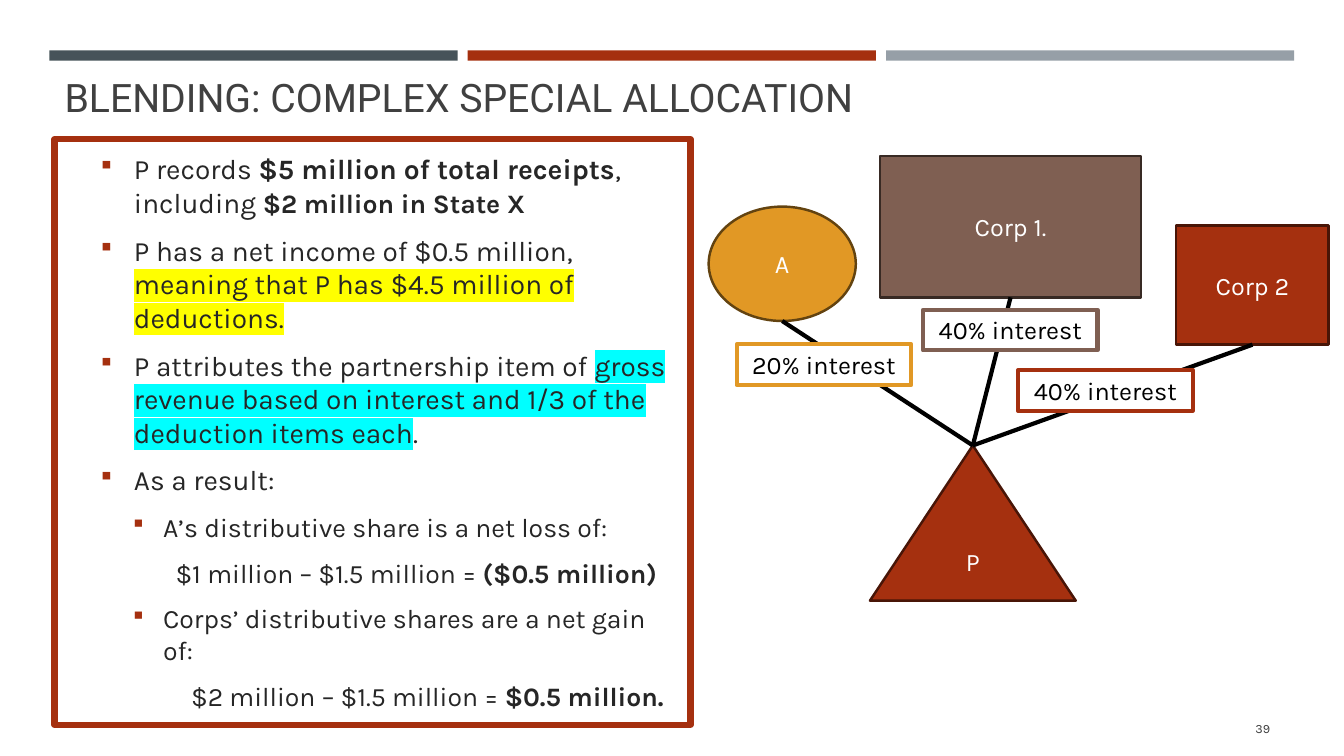
from typing import NamedTuple, Optional

from lxml.etree import SubElement
from pptx import Presentation
from pptx.dml.color import RGBColor
from pptx.enum.shapes import MSO_CONNECTOR, MSO_SHAPE
from pptx.enum.text import MSO_ANCHOR, MSO_AUTO_SIZE, PP_ALIGN
from pptx.oxml.ns import qn
from pptx.util import Pt

COLORS = {
    "slate": "465359", "red": "A5300F", "gray": "969FA7", "amber": "E19825", "brown": "7F5F52",
    "dark red": "481507", "dark amber": "634310", "dark brown": "382A24",
    "title": "404040", "body": "262626", "white": "FFFFFF", "black": "000000",
    "yellow": "FFFF00", "cyan": "00FFFF",
}


class Box(NamedTuple):
    left: float
    top: float
    width: float
    height: float


class Entity(NamedTuple):
    name: str
    kind: MSO_SHAPE
    box: Box
    fill: str
    line: str


class Label(NamedTuple):
    text: str
    left: float
    top: float
    line: str


class Piece(NamedTuple):
    text: str
    bold: bool = False
    highlight: Optional[str] = None
    size: Optional[float] = None


class Item(NamedTuple):
    pieces: list[Piece]
    size: float = 20
    margin: float = 49.7
    hanging: float = 23.8
    bullet: bool = True


BAR_COLORS = ["slate", "red", "gray"]
BAR = Box(35.3, 36, 291.6, 7.4)
BAR_STEP = 298.8

PARTNERSHIP = Entity("P", MSO_SHAPE.ISOSCELES_TRIANGLE, Box(621.4, 318.2, 147, 110.9), "red", "dark red")
PARTNERS = [
    Entity("A", MSO_SHAPE.OVAL, Box(506.2, 147.6, 105.1, 81.7), "amber", "dark amber"),
    Entity("Corp 1.", MSO_SHAPE.RECTANGLE, Box(628.6, 111.6, 186.5, 100.8), "brown", "dark brown"),
    Entity("Corp 2", MSO_SHAPE.RECTANGLE, Box(840.2, 161, 108.9, 85.2), "red", "dark red"),
]
LABEL_WIDTH, LABEL_HEIGHT = 124.7, 29
LABELS = [
    Label("20% interest", 526.2, 246, "amber"),
    Label("40% interest", 659.3, 221.3, "brown"),
    Label("40% interest", 727.2, 264.4, "red"),
]
SUB_ITEM = {"size": 19, "margin": 70.6, "hanging": 21.6}
ITEMS = [
    Item([Piece("P records "), Piece("$5 million of total receipts", bold=True),
          Piece(", including "), Piece("$2 million in State X", bold=True, size=19)]),
    Item([Piece("P has a net income of $0.5 million, "),
          Piece("meaning that P has $4.5 million of deductions.", highlight="yellow")]),
    Item([Piece("P attributes the partnership item of "),
          Piece("gross revenue based on interest and 1/3 of the deduction items each", highlight="cyan"),
          Piece(".")]),
    Item([Piece("As a result:")]),
    Item([Piece("A’s distributive share is a net loss of:")], **SUB_ITEM),
    Item([Piece("$1 million – $1.5 million = "), Piece("($0.5 million)", bold=True)],
         size=19, margin=79.4, hanging=0, bullet=False),
    Item([Piece("Corps’ distributive shares are a net gain of:")], **SUB_ITEM),
    Item([Piece("$2 million – $1.5 million = "), Piece("$0.5 million.", bold=True)],
         size=19, margin=90.5, hanging=0, bullet=False),
]


def rgb(color: str) -> RGBColor:
    return RGBColor.from_string(COLORS[color])


def add_text(paragraph, text: str, *, size: float, color: str, font: str = "Karla",
             bold: bool = False, highlight: Optional[str] = None) -> None:
    run = paragraph.add_run()
    run.text = text
    run.font.name = font
    run.font.size = Pt(size)
    run.font.bold = bold
    run.font.color.rgb = rgb(color)
    if highlight:
        properties = run.font._element
        mark = SubElement(properties, qn("a:highlight"))
        SubElement(mark, qn("a:srgbClr"), val=COLORS[highlight])
        properties.find(qn("a:solidFill")).addnext(mark)


def prepare_frame(shape, anchor: MSO_ANCHOR):
    frame = shape.text_frame
    frame.word_wrap = True
    frame.auto_size = MSO_AUTO_SIZE.NONE
    frame.vertical_anchor = anchor
    return frame


def add_block(slide, kind: MSO_SHAPE, box: Box, *, fill: Optional[str] = None,
              line: Optional[str] = None, line_width: float = 1.75):
    shape = slide.shapes.add_shape(kind, *map(Pt, box))
    shape.shadow.inherit = False
    if fill:
        shape.fill.solid()
        shape.fill.fore_color.rgb = rgb(fill)
    else:
        shape.fill.background()
    if line:
        shape.line.color.rgb = rgb(line)
        shape.line.width = Pt(line_width)
    else:
        shape.line.fill.background()
    return shape


def center_text(shape, text: str, color: str, anchor: MSO_ANCHOR) -> None:
    paragraph = prepare_frame(shape, anchor).paragraphs[0]
    paragraph.alignment = PP_ALIGN.CENTER
    add_text(paragraph, text, size=18, color=color)


def add_entity(slide, entity: Entity):
    shape = add_block(slide, entity.kind, entity.box, fill=entity.fill, line=entity.line)
    center_text(shape, entity.name, "white", MSO_ANCHOR.MIDDLE)
    return shape


def add_ownership_line(slide, partner, partnership) -> None:
    """Join the bottom of a partner to the apex of the partnership."""
    connector = slide.shapes.add_connector(
        MSO_CONNECTOR.STRAIGHT,
        partner.left + partner.width // 2, partner.top + partner.height,
        partnership.left + partnership.width // 2, partnership.top)
    if partner.auto_shape_type == MSO_SHAPE.RECTANGLE:
        connector.begin_connect(partner, 2)
    connector.end_connect(partnership, 0)
    connector.line.color.rgb = rgb("black")
    connector.line.width = Pt(3)
    SubElement(connector._element.spPr, qn("a:effectLst"))


def add_items(slide) -> None:
    panel = add_block(slide, MSO_SHAPE.RECTANGLE, Box(38.9, 99.4, 454.3, 418.3), line="red", line_width=4.5)
    frame = prepare_frame(panel, MSO_ANCHOR.MIDDLE)
    for index, item in enumerate(ITEMS):
        paragraph = frame.add_paragraph() if index else frame.paragraphs[0]
        paragraph.alignment = PP_ALIGN.LEFT
        paragraph.space_before = Pt(4 if index else 0)
        paragraph.space_after = Pt(6)
        properties = paragraph._p.get_or_add_pPr()
        properties.set("marL", str(Pt(item.margin)))
        properties.set("indent", str(-Pt(item.hanging)))
        if item.bullet:
            SubElement(SubElement(properties, qn("a:buClr")), qn("a:srgbClr"), val=COLORS["red"])
            SubElement(properties, qn("a:buSzPct"), val="92000")
            SubElement(properties, qn("a:buFont"), typeface="Wingdings", charset="2")
            SubElement(properties, qn("a:buChar"), char="§")
        for piece in item.pieces:
            add_text(paragraph, piece.text, size=piece.size or item.size, color="body",
                     bold=piece.bold, highlight=piece.highlight)


def add_heading(slide) -> None:
    for index, color in enumerate(BAR_COLORS):
        add_block(slide, MSO_SHAPE.RECTANGLE, BAR._replace(left=BAR.left + index * BAR_STEP), fill=color)
    title = slide.shapes.title
    title.left, title.top, title.width, title.height = map(Pt, (38.9, 47.5, 868.3, 41.8))
    paragraph = prepare_frame(title, MSO_ANCHOR.BOTTOM).paragraphs[0]
    paragraph.alignment = PP_ALIGN.LEFT
    add_text(paragraph, "BLENDING: COMPLEX SPECIAL ALLOCATION", size=28, color="title", font="Roboto")


def add_page_number(slide) -> None:
    text_box = slide.shapes.add_textbox(*map(Pt, (831.6, 506.2, 82.8, 28.8)))
    paragraph = prepare_frame(text_box, MSO_ANCHOR.MIDDLE).paragraphs[0]
    paragraph.alignment = PP_ALIGN.RIGHT
    add_text(paragraph, "39", size=9, color="title")


def add_ownership_diagram(slide) -> None:
    partnership = add_entity(slide, PARTNERSHIP)
    for partner in [add_entity(slide, entity) for entity in PARTNERS]:
        add_ownership_line(slide, partner, partnership)
    for label in LABELS:
        box = Box(label.left, label.top, LABEL_WIDTH, LABEL_HEIGHT)
        shape = add_block(slide, MSO_SHAPE.RECTANGLE, box, fill="white", line=label.line, line_width=3)
        center_text(shape, label.text, "black", MSO_ANCHOR.TOP)


def main() -> None:
    presentation = Presentation()
    presentation.slide_width, presentation.slide_height = Pt(960), Pt(540)
    slide = presentation.slides.add_slide(presentation.slide_layouts[5])
    add_heading(slide)
    add_items(slide)
    add_page_number(slide)
    add_ownership_diagram(slide)
    presentation.save("out.pptx")


if __name__ == "__main__":
    main()
